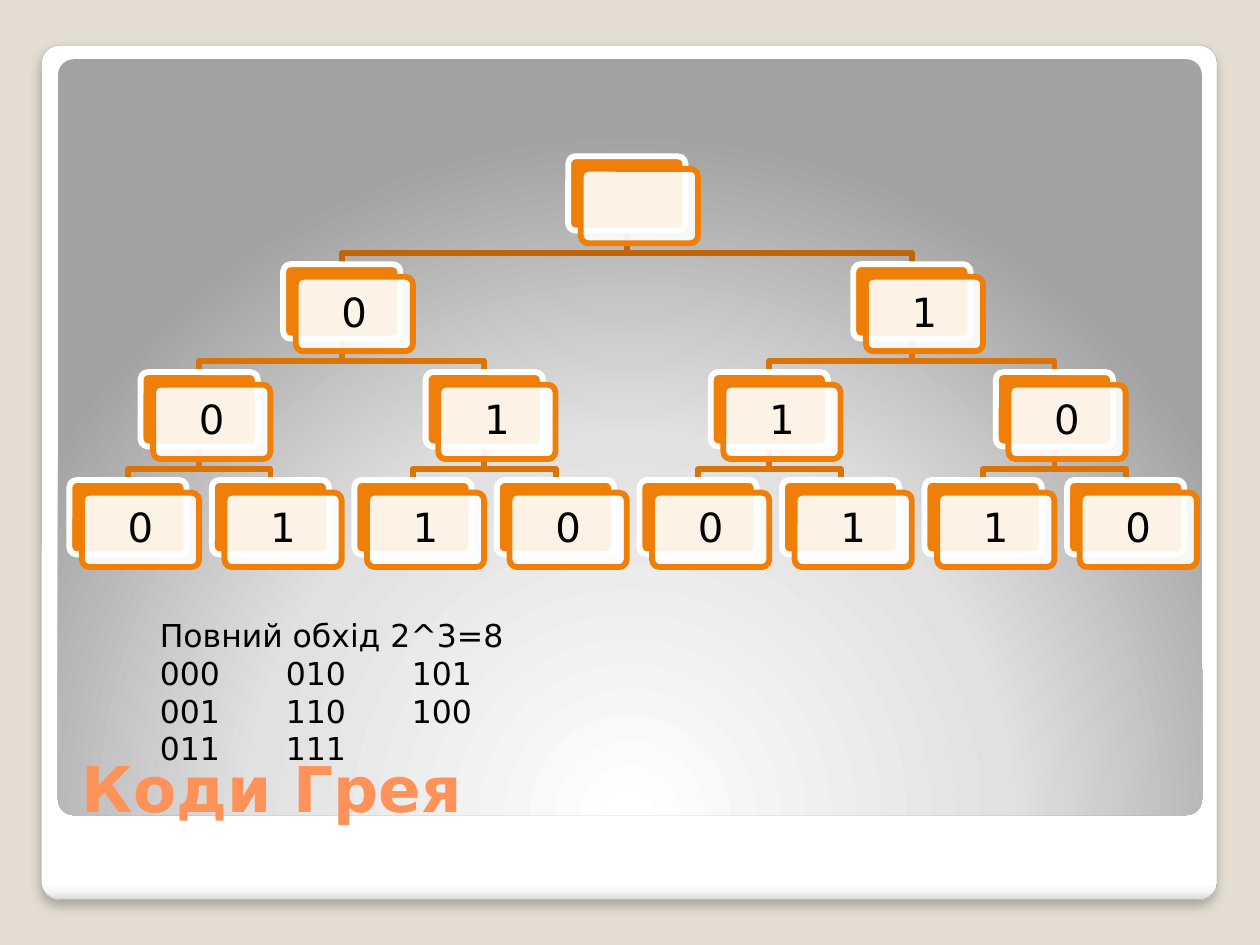
from lxml import etree
from pptx import Presentation
from pptx.dml.color import RGBColor
from pptx.enum import shapes as sh, text as tx
from pptx.oxml import parse_xml
from pptx.oxml.ns import qn
from pptx.util import Inches, Pt

FONT = "DejaVu Sans"
TITLE = "Коди Грея"
LEVELS = [[""], "01", "0110", "01100110"]
NOTES = ["Повний обхід 2^3=8", "000\t010\t101", "001\t110\t100", "011\t111"]
TABS = [1, 2]
FRAME = [(0, "FFFFFF"), (98, "FFFFFF"), (99, "F7F7F7"), (100, "DADADA")]
PANEL = [(0, "FFFFFF"), (55, "E1E1E1"), (100, "A2A2A2")]
DOWN = '<a:lin ang="5400000" scaled="0"/>'
ROUND = ('<a:path path="circle"><a:fillToRect l="50000" t="175000" '
         'r="50000" b="-75000"/></a:path>')
NS = 'xmlns:a="http://schemas.openxmlformats.org/drawingml/2006/main"'
SHADOW = (f'<a:outerShdw {NS} blurRad="76200" dist="50800" dir="5400000" '
          'rotWithShape="0"><a:srgbClr val="000000"><a:alpha val="25000"/>'
          '</a:srgbClr></a:outerShdw>')

LEFT, WIDE = 0.45, 9.05      # span of the whole tree
TOP, STEP = 1.24, 2.57 / 3   # first row and distance between rows
W, H, SHIFT = 0.93, 0.59, 0.1
BEND = 0.18                  # from a node's foot to the crossbar
LINE = 3.35


def rgb(code):
    return RGBColor.from_string(code)


def style(para, size, color, bold=False):
    font = para.font
    font.name, font.size, font.bold = FONT, Pt(size), bold
    font.color.rgb = rgb(color)


def box(parent, x, y, w, h, adj, fill, line=None, width=LINE):
    """Add a rounded rectangle with a plain fill."""
    item = parent.add_shape(sh.MSO_SHAPE.ROUNDED_RECTANGLE,
                            Inches(x), Inches(y), Inches(w), Inches(h))
    item.adjustments[0] = adj
    item.shadow.inherit = False
    item.fill.solid()
    item.fill.fore_color.rgb = rgb(fill)
    if line:
        item.line.color.rgb = rgb(line)
        item.line.width = Pt(width)
    else:
        item.line.fill.background()
    return item


def shade(item, stops, path):
    """Swap the plain fill for a gradient."""
    marks = "".join(f'<a:gs pos="{pos * 1000}"><a:srgbClr val="{code}"/></a:gs>'
                    for pos, code in stops)
    props = item._element.spPr
    props.replace(props.find(qn("a:solidFill")), parse_xml(
        f'<a:gradFill {NS} rotWithShape="1"><a:gsLst>{marks}</a:gsLst>{path}</a:gradFill>'))


def place(level, i):
    """Middle and top of a node's back card."""
    span = WIDE / 2 ** level
    return LEFT + span * (i + 0.5), TOP + STEP * level


def link(parent, level, i):
    """Draw the elbow from a node up to its parent."""
    x, y = place(level, i)
    px, py = place(level - 1, i // 2)
    foot = py + H
    pts = [(Inches(a), Inches(b)) for a, b in
           [(px, foot), (px, foot + BEND), (x, foot + BEND), (x, y)]]
    path = parent.build_freeform(*pts[0], scale=1.0)
    path.add_line_segments(pts[1:], close=False)
    elbow = path.convert_to_shape()
    elbow.shadow.inherit = False
    elbow.fill.background()
    elbow.line.color.rgb = rgb("C06607" if level == 1 else "DA7308")
    elbow.line.width = Pt(LINE)


def node(parent, level, i, digit):
    mid, y = place(level, i)
    x = mid - W / 2
    box(parent, x, y, W, H, 0.1, "F07F09", "FFFFFF")
    card = box(parent, x + SHIFT, y + SHIFT, W, H, 0.1, "FFFFFF", "F07F09")
    color = card._element.spPr.find(qn("a:solidFill"))[0]
    etree.SubElement(color, qn("a:alpha")).set("val", "90000")
    if digit:
        frame = card.text_frame
        frame.vertical_anchor = tx.MSO_ANCHOR.MIDDLE
        para = frame.paragraphs[0]
        para.text = digit
        para.alignment = tx.PP_ALIGN.CENTER
        para.line_spacing = 0.9
        style(para, 23, "000000")


def set_tabs(para):
    stops = etree.SubElement(para._p.get_or_add_pPr(), qn("a:tabLst"))
    for pos in TABS:
        tab = etree.SubElement(stops, qn("a:tab"))
        tab.set("pos", str(Inches(pos)))
        tab.set("algn", "l")


def main():
    prs = Presentation()
    prs.slide_width, prs.slide_height = Inches(10), Inches(7.5)
    slide = prs.slides.add_slide(prs.slide_layouts[5])
    slide.background.fill.solid()
    slide.background.fill.fore_color.rgb = rgb("E3DED1")
    shapes = slide.shapes

    frame = box(shapes, 0.33, 0.36, 9.33, 6.78, 0.021, "FFFFFF", "A4A4A4", 0.16)
    shade(frame, FRAME, DOWN)
    frame._element.spPr.find(qn("a:effectLst")).append(parse_xml(SHADOW))
    shade(box(shapes, 0.46, 0.47, 9.08, 6, 0.021, "FFFFFF"), PANEL, ROUND)

    title = shapes.title
    shapes._spTree.append(title._element)  # bring above the panels
    title.left, title.top = Inches(0.55), Inches(5.45)
    title.width, title.height = Inches(8.95), Inches(1.15)
    title.text_frame.text = TITLE
    title.text_frame.vertical_anchor = tx.MSO_ANCHOR.BOTTOM
    para = title.text_frame.paragraphs[0]
    para.alignment = tx.PP_ALIGN.LEFT
    style(para, 36, "FF9258", True)

    tree = shapes.add_group_shape().shapes
    nodes = [(level, i, digit) for level, row in enumerate(LEVELS)
             for i, digit in enumerate(row)]
    for level, i, _ in nodes[1:]:
        link(tree, level, i)
    for level, i, digit in nodes:
        node(tree, level, i, digit)

    notes = shapes.add_textbox(Inches(1.17), Inches(4.84), Inches(7.66), Inches(1.31))
    notes.text_frame.word_wrap = True
    notes.text_frame.text = "\n".join(NOTES)
    for para in notes.text_frame.paragraphs:
        set_tabs(para)
        style(para, 18, "000000")

    prs.save("out.pptx")


if __name__ == "__main__":
    main()
